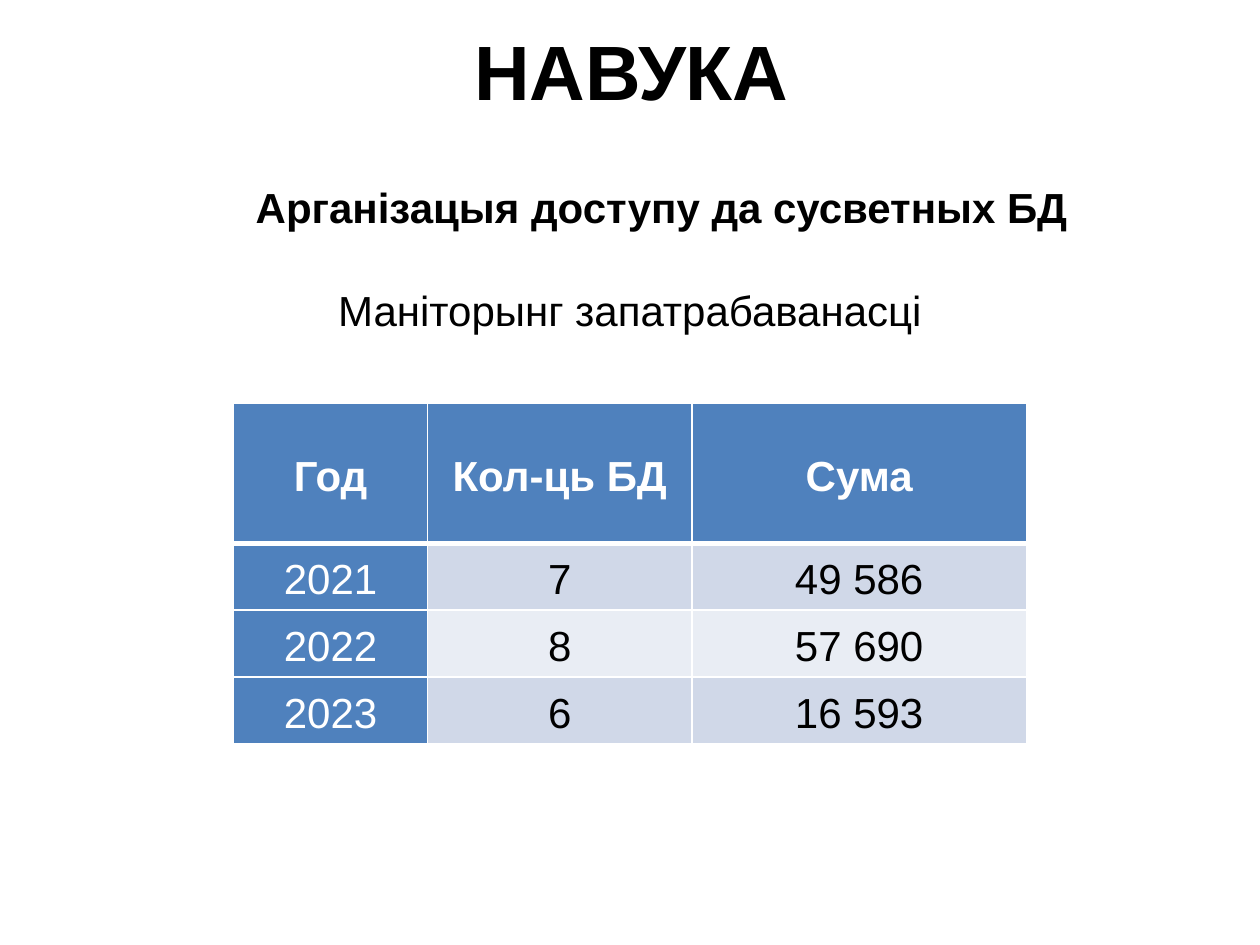
"""Build the science slide on access to world databases."""
from lxml import etree
from pptx import Presentation, util as u
from pptx.dml.color import RGBColor
from pptx.enum import text as t
from pptx.oxml.ns import qn

TITLE = "НАВУКА"
LINES = [
    ("Арганізацыя доступу да сусветных БД", {"bold": True, "left": 1.27}),
    ("Маніторынг запатрабаванасці", {"gap": 30}),
]
ROWS = [
    ("Год", "Кол-ць БД", "Сума"),
    ("2021", "7", "49 586"),
    ("2022", "8", "57 690"),
    ("2023", "6", "16 593"),
]
WIDTHS = [3.91, 5.33, 6.74]
HEIGHTS = [2.82] + [1.35] * 3
THEME = {
    "font": "Arial", "big": 44, "size": 24,
    "ink": "000000", "white": "FFFFFF", "head": "4F81BD",
    "bands": ("D0D8E8", "E9EDF4"),
}


def write(par, words, size=THEME["size"], ink=THEME["ink"], bold=False,
          left=0, gap=0, line=1.0):
    props = par._p.get_or_add_pPr()
    props.set("marL", str(u.Cm(left)))
    props.set("indent", "0")
    par.line_spacing = line
    par.space_before = u.Pt(gap)
    etree.SubElement(props, qn("a:buNone"))
    par.alignment = t.PP_ALIGN.CENTER
    run = par.add_run()
    run.text = words
    font = run.font
    font.name, font.size, font.bold = THEME["font"], u.Pt(size), bold
    font.color.rgb = RGBColor.from_string(ink)


def place(shape, *box):
    shape.left, shape.top, shape.width, shape.height = map(u.Cm, box)
    shape.text_frame.auto_size = t.MSO_AUTO_SIZE.NONE
    return shape.text_frame


def edge(cell, base):
    props = cell._tc.get_or_add_tcPr()
    for spot, (side, wide) in enumerate(zip("LRTB", (1, 1, 1, base))):
        line = etree.Element(qn(f"a:ln{side}"), w=str(u.Pt(wide)))
        fill = etree.SubElement(line, qn("a:solidFill"))
        etree.SubElement(fill, qn("a:srgbClr"), val=THEME["white"])
        props.insert(spot, line)


def paint(cell, words, row, col):
    top = row == 0
    dark = top or col == 0
    tone = THEME["head"] if dark else THEME["bands"][(row - 1) % 2]
    cell.fill.solid()
    cell.fill.fore_color.rgb = RGBColor.from_string(tone)
    cell.vertical_anchor = t.MSO_ANCHOR.MIDDLE
    cell.margin_left = cell.margin_right = u.Cm(0.18)
    cell.margin_top = cell.margin_bottom = 0
    edge(cell, 3 if top else 1)
    write(cell.text_frame.paragraphs[0], words, bold=top, line=1.15,
          ink=THEME["white" if dark else "ink"])


def main():
    deck = Presentation()
    deck.slide_width, deck.slide_height = u.Cm(25.4), u.Cm(19.05)
    slide = deck.slides.add_slide(deck.slide_layouts[1])

    head = place(slide.shapes.title, 1.3, 0.13, 22.86, 2.57)
    head.vertical_anchor = t.MSO_ANCHOR.MIDDLE
    write(head.paragraphs[0], TITLE, size=THEME["big"], bold=True)

    body = place(slide.placeholders[1], 0, 3.53, 25.4, 3.33)
    body.vertical_anchor = t.MSO_ANCHOR.TOP
    for num, (words, form) in enumerate(LINES):
        par = body.add_paragraph() if num else body.paragraphs[0]
        write(par, words, **form)

    wide, high = sum(WIDTHS), sum(HEIGHTS)
    grid = slide.shapes.add_table(
        len(ROWS), len(WIDTHS), u.Cm((25.4 - wide) / 2), u.Cm(8.13),
        u.Cm(wide), u.Cm(high)).table
    for col, size in zip(grid.columns, WIDTHS):
        col.width = u.Cm(size)
    for row, size in zip(grid.rows, HEIGHTS):
        row.height = u.Cm(size)
    for row, cells in enumerate(ROWS):
        for col, words in enumerate(cells):
            paint(grid.cell(row, col), words, row, col)

    deck.save("out.pptx")


if __name__ == "__main__":
    main()
